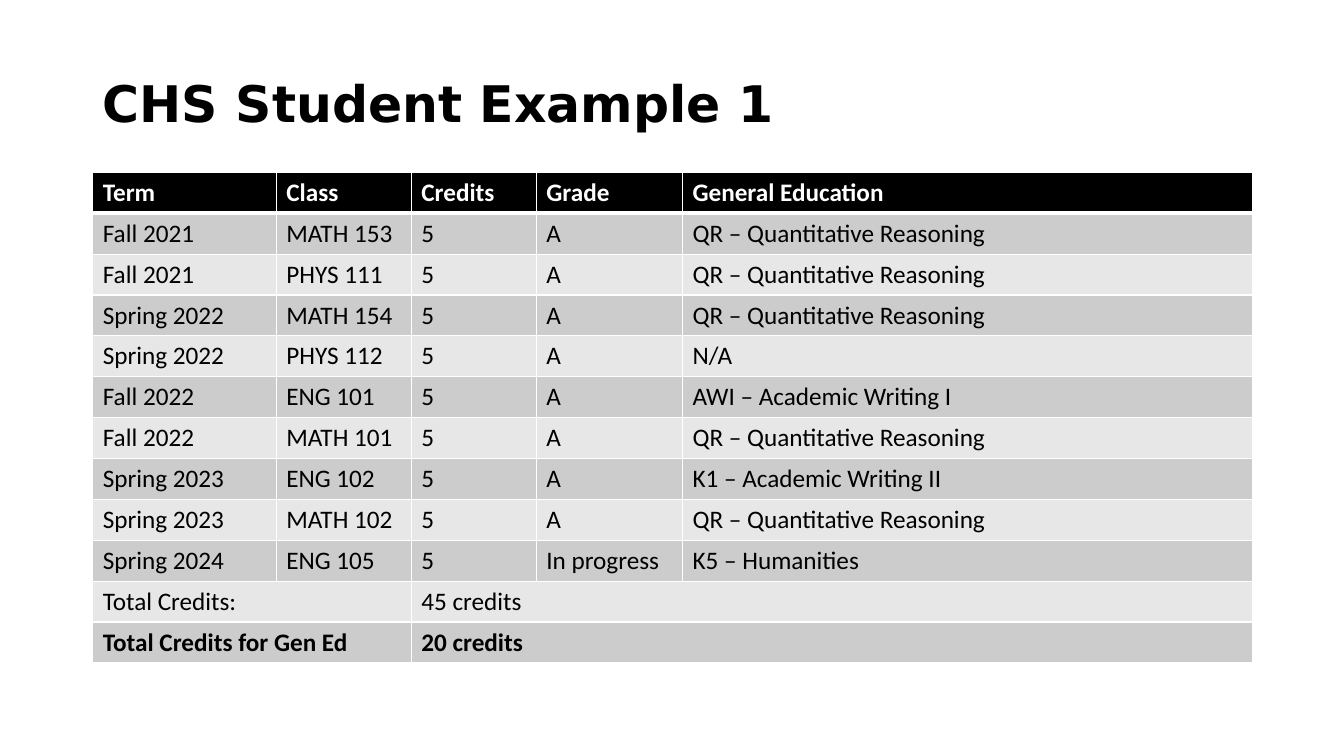
from lxml import etree
from pptx import Presentation
from pptx.dml.color import RGBColor
from pptx.enum import text
from pptx.oxml import ns
from pptx.util import Inches, Pt

# Content
TITLE = "CHS Student Example 1"
HEADER = ("Term", "Class", "Credits", "Grade", "General Education")
QUANTITATIVE = "QR – Quantitative Reasoning"
CLASSES = [
    ("Fall 2021", "MATH 153", "5", "A", QUANTITATIVE),
    ("Fall 2021", "PHYS 111", "5", "A", QUANTITATIVE),
    ("Spring 2022", "MATH 154", "5", "A", QUANTITATIVE),
    ("Spring 2022", "PHYS 112", "5", "A", "N/A"),
    ("Fall 2022", "ENG 101", "5", "A", "AWI – Academic Writing I"),
    ("Fall 2022", "MATH 101", "5", "A", QUANTITATIVE),
    ("Spring 2023", "ENG 102", "5", "A", "K1 – Academic Writing II"),
    ("Spring 2023", "MATH 102", "5", "A", QUANTITATIVE),
    ("Spring 2024", "ENG 105", "5", "In progress", "K5 – Humanities"),
]
TOTALS = [("Total Credits:", "45 credits"), ("Total Credits for Gen Ed", "20 credits")]

# Look
BLACK = RGBColor(0x00, 0x00, 0x00)
WHITE = RGBColor(0xFF, 0xFF, 0xFF)
BANDS = (RGBColor(0xE7, 0xE7, 0xE7), RGBColor(0xCC, 0xCC, 0xCC))
TITLE_FONT, TABLE_FONT = "DejaVu Sans", "Calibri"

# Layout in inches
WIDTH, HEIGHT = 13.33, 7.5
MARGIN, TITLE_TOP, TABLE_TOP = 0.92, 0.4, 1.71
COLUMNS = (1.82, 1.34, 1.24, 1.45, 5.65)
TABLE_WIDTH, TABLE_HEIGHT = sum(COLUMNS), 4.85
TOTAL_SPLIT = 2


def write(paragraph, words, font, size, color, bold):
    run = paragraph.add_run()
    run.text = words
    run.font.name = font
    run.font.size = Pt(size)
    run.font.color.rgb = color
    run.font.bold = bold


def add_borders(cell, widths):
    properties = cell._tc.get_or_add_tcPr()
    for side, width in widths.items():
        line = etree.SubElement(properties, ns.qn(f"a:ln{side}"), w=str(Pt(width)))
        fill = etree.SubElement(line, ns.qn("a:solidFill"))
        etree.SubElement(fill, ns.qn("a:srgbClr"), val=str(WHITE))


def add_title(slide):
    title = slide.shapes.title
    title.left, title.top = Inches(MARGIN), Inches(TITLE_TOP)
    title.width, title.height = Inches(TABLE_WIDTH), Inches(TABLE_TOP - TITLE_TOP)
    title.text_frame.vertical_anchor = text.MSO_ANCHOR.MIDDLE
    paragraph = title.text_frame.paragraphs[0]
    paragraph.alignment = text.PP_ALIGN.LEFT
    paragraph.line_spacing = 0.9
    write(paragraph, TITLE, TITLE_FONT, 36, BLACK, True)


def add_credit_table(slide):
    # Total rows fill only the first cell of each merged span
    blanks = [""] * (TOTAL_SPLIT - 1)
    rest = [""] * (len(COLUMNS) - TOTAL_SPLIT - 1)
    totals = [(label, *blanks, value, *rest) for label, value in TOTALS]
    rows = [HEADER, *CLASSES, *totals]
    table = slide.shapes.add_table(
        len(rows), len(COLUMNS), Inches(MARGIN), Inches(TABLE_TOP),
        Inches(TABLE_WIDTH), Inches(TABLE_HEIGHT)).table
    for column, width in zip(table.columns, COLUMNS):
        column.width = Inches(width)

    # Cells
    for r, row in enumerate(rows):
        is_header = r == 0
        is_bold = is_header or r == len(rows) - 1
        for c, words in enumerate(row):
            cell = table.cell(r, c)
            add_borders(cell, {"L": 1, "R": 1, "T": 3 if r == 1 else 1,
                               "B": 3 if is_header else 1})
            cell.fill.solid()
            cell.fill.fore_color.rgb = BLACK if is_header else BANDS[r % 2]
            if words:
                write(cell.text_frame.paragraphs[0], words, TABLE_FONT, 18,
                      WHITE if is_header else BLACK, is_bold)

    # Merged spans in the total rows
    for r in range(len(rows) - len(totals), len(rows)):
        table.cell(r, 0).merge(table.cell(r, TOTAL_SPLIT - 1))
        table.cell(r, TOTAL_SPLIT).merge(table.cell(r, len(COLUMNS) - 1))


def main():
    presentation = Presentation()
    presentation.slide_width, presentation.slide_height = Inches(WIDTH), Inches(HEIGHT)
    slide = presentation.slides.add_slide(presentation.slide_layouts[5])
    add_title(slide)
    add_credit_table(slide)
    presentation.save("out.pptx")


if __name__ == "__main__":
    main()
